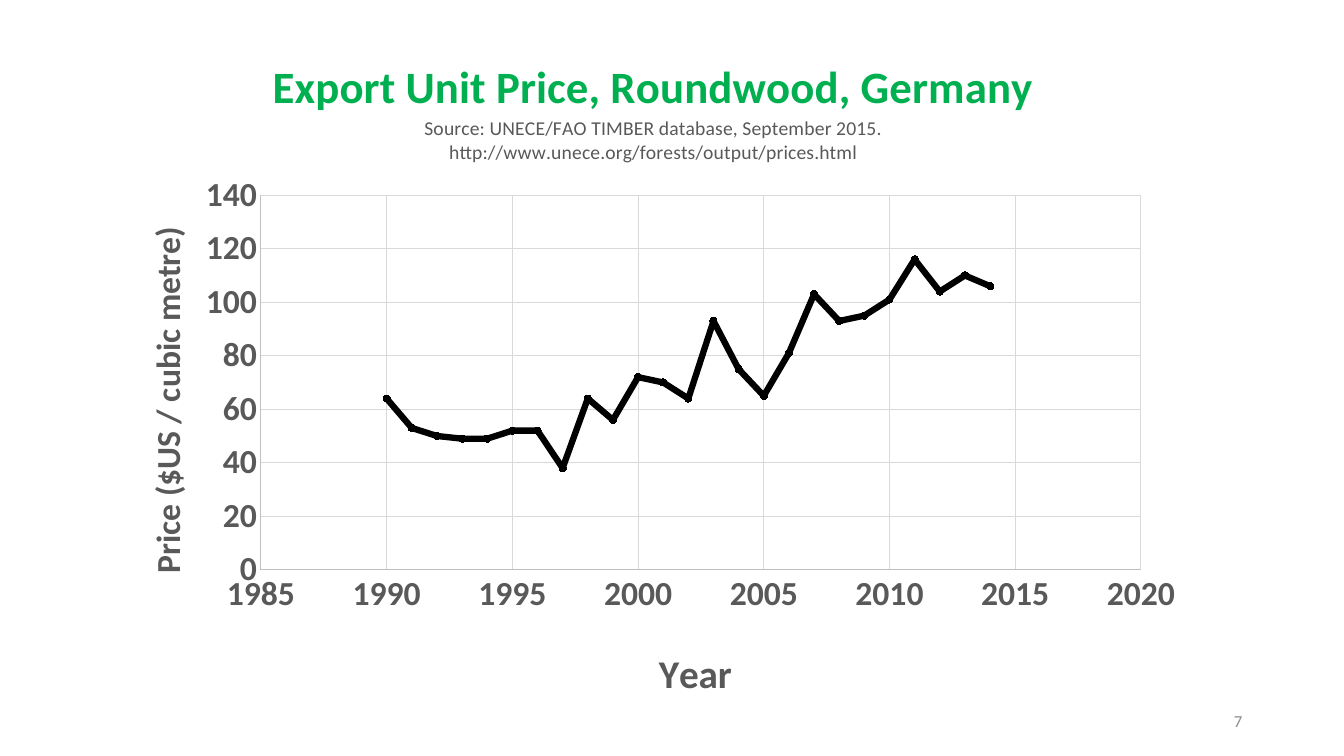
from dataclasses import dataclass

from lxml import etree
from pptx import Presentation
from pptx.chart.data import XyChartData
from pptx.dml.color import RGBColor
from pptx.enum.chart import XL_CHART_TYPE, XL_MARKER_STYLE, XL_TICK_MARK
from pptx.enum.text import MSO_ANCHOR, PP_ALIGN
from pptx.oxml import parse_xml
from pptx.oxml.ns import nsdecls, qn
from pptx.util import Inches, Pt

SCATTER_LINES = XL_CHART_TYPE.XY_SCATTER_LINES
CIRCLE = XL_MARKER_STYLE.CIRCLE
NO_TICK = XL_TICK_MARK.NONE
MIDDLE = MSO_ANCHOR.MIDDLE
RIGHT = PP_ALIGN.RIGHT


@dataclass(frozen=True)
class Theme:
    font: str = "Calibri"
    green: str = "00B050"
    gray: str = "595959"
    page_gray: str = "8C8C8C"
    axis_line: str = "BFBFBF"
    grid: str = "D9D9D9"
    series: str = "000000"
    title_size: float = 32
    source_size: float = 14
    tick_size: float = 24
    page_size: float = 12


@dataclass(frozen=True)
class TitleLine:
    text: str
    size: float
    color: str
    bold: bool = True


@dataclass(frozen=True)
class AxisStyle:
    title: str
    title_size: float
    title_x: float
    title_y: float
    minimum: float
    maximum: float
    step: float


THEME = Theme()
HEADING = [
    TitleLine("Export Unit Price, Roundwood, Germany", THEME.title_size, THEME.green),
    TitleLine("Source: UNECE/FAO TIMBER database, September 2015.", THEME.source_size, THEME.gray, False),
    TitleLine("http://www.unece.org/forests/output/prices.html", THEME.source_size, THEME.gray, False),
]
YEAR_AXIS = AxisStyle("Year", 28, 0.5, 0.89, 1985, 2020, 5)
PRICE_AXIS = AxisStyle("Price ($US / cubic metre)", 24, 0.03, 0.28, 0, 140, 20)
LATEST_YEAR = 2014
PRICES = [106, 110, 104, 116, 101, 95, 93, 103, 81, 65, 75, 93, 64,
          70, 72, 56, 64, 38, 52, 52, 49, 49, 50, 53, 64]


def style_font(font, *, size: float, color: str, bold: bool = False) -> None:
    font.name = THEME.font
    font.size = Pt(size)
    font.bold = bold
    font.color.rgb = RGBColor.from_string(color)


def style_line(line, color: str, width: float) -> None:
    line.color.rgb = RGBColor.from_string(color)
    line.width = Pt(width)


def set_layout(element, values: dict[str, float], inner: bool = False) -> None:
    for old_layout in element.findall(qn("c:layout")):
        element.remove(old_layout)
    layout = parse_xml(f"<c:layout {nsdecls('c')}><c:manualLayout/></c:layout>")
    settings = {"layoutTarget": "inner"} if inner else {}
    settings |= {"xMode": "edge", "yMode": "edge"} | values
    for name, value in settings.items():
        etree.SubElement(layout[0], qn(f"c:{name}")).set("val", str(value))
    text = element.find(qn("c:tx"))
    if text is None:
        element.insert(0, layout)
    else:
        text.addnext(layout)


def write_title(title, lines: list[TitleLine], x: float, y: float) -> None:
    frame = title.text_frame
    for index, line in enumerate(lines):
        paragraph = frame.paragraphs[0] if index == 0 else frame.add_paragraph()
        run = paragraph.add_run()
        run.text = line.text
        style_font(run.font, size=line.size, color=line.color, bold=line.bold)
    set_layout(frame._txBody.getparent().getparent(), {"x": x, "y": y})


def style_axis(axis, style: AxisStyle) -> None:
    axis.minimum_scale = style.minimum
    axis.maximum_scale = style.maximum
    axis.major_unit = style.step
    axis.major_tick_mark = NO_TICK
    axis.minor_tick_mark = NO_TICK
    axis.has_major_gridlines = True
    style_line(axis.major_gridlines.format.line, THEME.grid, 0.75)
    style_line(axis.format.line, THEME.axis_line, 0.75)
    style_font(axis.tick_labels.font, size=THEME.tick_size, color=THEME.gray, bold=True)
    axis.tick_labels.number_format = "General"
    axis.tick_labels.number_format_is_linked = False
    line = TitleLine(style.title, style.title_size, THEME.gray)
    write_title(axis.axis_title, [line], style.title_x, style.title_y)


def add_price_chart(slide) -> None:
    data = XyChartData()
    points = data.add_series("Series 1")
    for age, price in enumerate(PRICES):
        points.add_data_point(LATEST_YEAR - age, price)
    chart = slide.shapes.add_chart(
        SCATTER_LINES, Inches(1.05), Inches(0.28), Inches(10.83), Inches(6.82), data
    ).chart
    style_font(chart.font, size=10, color=THEME.series)
    chart.has_legend = False
    chart.has_title = True
    write_title(chart.chart_title, HEADING, 0.15, 0.04)
    style_axis(chart.category_axis, YEAR_AXIS)
    style_axis(chart.value_axis, PRICE_AXIS)
    price_title = chart.value_axis.axis_title.text_frame
    price_title._txBody.find(qn("a:bodyPr")).set("rot", "-5400000")
    plot = chart.plots[0]
    plot.vary_by_categories = False
    series = plot.series[0]
    series.smooth = False
    style_line(series.format.line, THEME.series, 4.5)
    series.marker.style = CIRCLE
    series.marker.size = 5
    series.marker.format.fill.solid()
    series.marker.format.fill.fore_color.rgb = RGBColor.from_string(THEME.series)
    style_line(series.marker.format.line, THEME.series, 0.75)
    plot_area = chart.element.find(f".//{qn('c:plotArea')}")
    set_layout(plot_area, {"x": 0.142, "y": 0.243, "w": 0.806, "h": 0.545}, inner=True)


def add_page_number(slide, text: str) -> None:
    shape = slide.shapes.add_textbox(Inches(9.42), Inches(6.95), Inches(3), Inches(0.4))
    frame = shape.text_frame
    frame.word_wrap = True
    frame.vertical_anchor = MIDDLE
    paragraph = frame.paragraphs[0]
    paragraph.alignment = RIGHT
    run = paragraph.add_run()
    run.text = text
    style_font(run.font, size=THEME.page_size, color=THEME.page_gray)


def main() -> None:
    presentation = Presentation()
    presentation.slide_width = Inches(13.33)
    presentation.slide_height = Inches(7.5)
    slide = presentation.slides.add_slide(presentation.slide_layouts[6])
    add_page_number(slide, "7")
    add_price_chart(slide)
    presentation.save("out.pptx")


if __name__ == "__main__":
    main()
